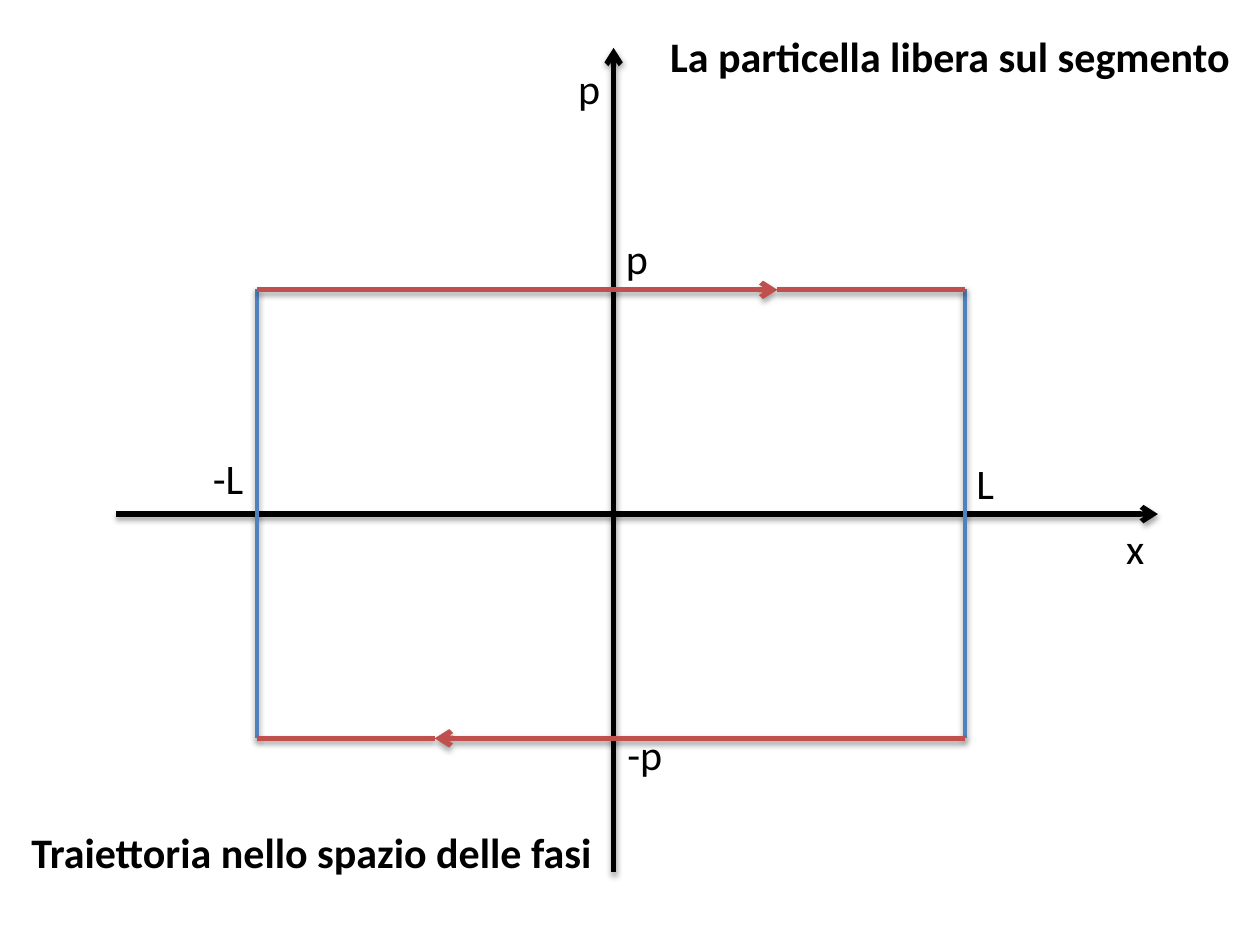
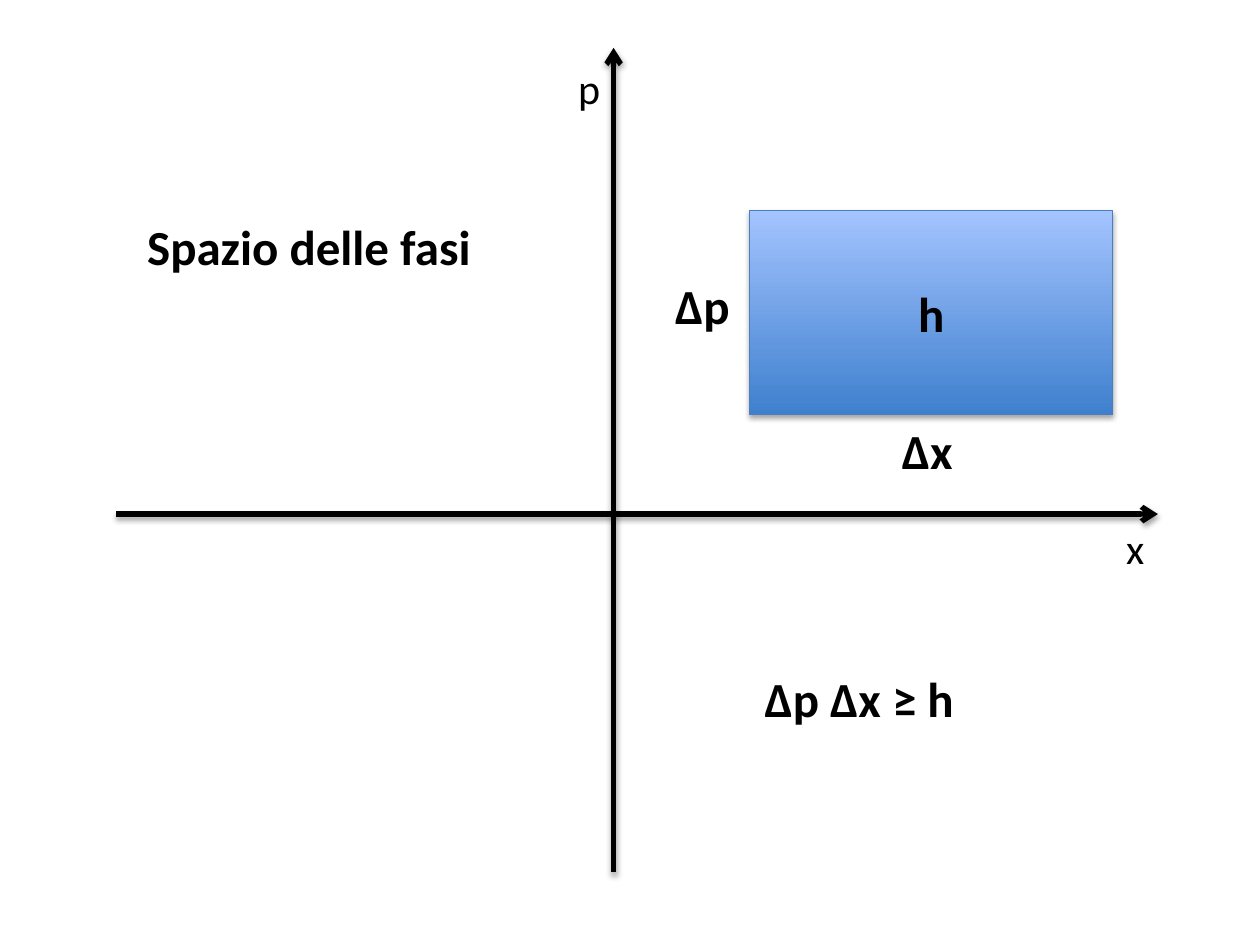
from lxml import etree
from pptx import Presentation, util as u
from pptx.dml.color import RGBColor
from pptx.enum import shapes, text
from pptx.oxml.ns import qn

PX = 9144  # EMU per px, 100 px to the inch
FONT = "Calibri"
COL = {"ink": "000000", "wall": "4F81BD", "path": "C0504D",
       "low": "3F80CE", "high": "A4C4FF", "edge": "4B7EBC"}
AXES = (92, 38, 827, 654)
ORBIT = (204, 230, 562, 356)
CELL = (595, 167, 288, 162)


def rgb(name):
    return RGBColor.from_string(COL[name])


def shade(shape, dist=23000, alpha=35):
    """Soft shadow straight below; call after the line is set."""
    fx = etree.SubElement(shape._element.spPr, qn("a:effectLst"))
    drop = etree.SubElement(fx, qn("a:outerShdw"), blurRad="40000",
                            dist=str(dist), dir="5400000", rotWithShape="0")
    tint = etree.SubElement(drop, qn("a:srgbClr"), val=COL["ink"])
    etree.SubElement(tint, qn("a:alpha"), val=str(alpha * 1000))


def stroke(slide, start, end, col, width=3, arrow=False, **shadow):
    ends = [n * PX for n in (*start, *end)]
    line = slide.shapes.add_connector(shapes.MSO_CONNECTOR.STRAIGHT, *ends)
    line.line.color.rgb = rgb(col)
    line.line.width = u.Pt(width)
    if arrow:
        etree.SubElement(line.line._get_or_add_ln(), qn("a:tailEnd"), type="arrow")
    shade(line, **shadow)


def style(frame, words, size, bold):
    para = frame.paragraphs[0]
    para.text = words
    font = para.font
    font.name, font.size, font.bold = FONT, u.Pt(size), bold
    font.color.rgb = rgb("ink")
    return para


def label(slide, words, left, top, width, size=24, bold=False, wrap=False):
    high = 50 if size == 24 else 57
    box = slide.shapes.add_textbox(left * PX, top * PX, width * PX, high * PX)
    frame = box.text_frame
    frame.word_wrap = wrap
    frame.auto_size = text.MSO_AUTO_SIZE.SHAPE_TO_FIT_TEXT
    style(frame, words, size, bold)


def axes(slide, box):
    """Position and momentum axes with their names."""
    x, y, w, h = box
    mid_x, mid_y = x + 395, y + 370
    stroke(slide, (x, mid_y), (x + w, mid_y), "ink", arrow=True)
    stroke(slide, (mid_x, y + h), (mid_x, y), "ink", arrow=True)
    label(slide, "p", mid_x - 38, y + 7, 48, wrap=True)
    label(slide, "x", x + w - 35, mid_y + 2, 50, wrap=True)


def orbit(slide, box):
    """Closed path between the walls at -L and L."""
    x, y, w, h = box
    right, base = x + w, y + h
    for wall in (right, x):
        stroke(slide, (wall, y - 1), (wall, base), "wall", 2, dist=20000, alpha=38)

    # Limits on both axes
    label(slide, "L", right - 1, y + 128, 34)
    label(slide, "-L", x - 45, y + 124, 72, wrap=True)
    label(slide, "p", x + 283, y - 50, 36, wrap=True)
    label(slide, "-p", x + 284, base - 13, 48)

    # Each run has an arrow part and a plain rest
    for start, tip, end, row in ((x, x + 413, right, y), (right, x + 141, x, base)):
        stroke(slide, (start, row), (tip, row), "path", arrow=True)
        stroke(slide, (tip, row), (end, row), "path")


def cell(slide, box):
    """Smallest cell of phase space, with its two sides named."""
    x, y, w, h = box
    rect = slide.shapes.add_shape(shapes.MSO_SHAPE.RECTANGLE,
                                  *(n * PX for n in box))
    rect.fill.gradient()
    rect.fill.gradient_angle = 90
    for stop, name in zip(rect.fill.gradient_stops, ("low", "high")):
        stop.color.rgb = rgb(name)
        stop.position = float(name == "high")
    rect.line.color.rgb = rgb("edge")
    rect.line.width = u.Pt(0.75)
    shade(rect)
    frame = rect.text_frame
    frame.vertical_anchor = text.MSO_ANCHOR.MIDDLE
    style(frame, "h", 28, True).alignment = text.PP_ALIGN.CENTER
    label(slide, "Δx", x + 111, y + h, 61, 28, True)
    label(slide, "Δp", x - 69, y + 47, 64, 28, True)


def main():
    deck = Presentation()
    deck.slide_width, deck.slide_height = 1000 * PX, 750 * PX
    pages = [deck.slides.add_slide(deck.slide_layouts[6]) for _ in range(2)]
    for page in pages:
        axes(page, AXES)
    free, phase = pages

    # Free particle on a segment
    orbit(free, ORBIT)
    label(free, "La particella libera sul segmento", 522, 19, 470, bold=True)
    label(free, "Traiettoria nello spazio delle fasi", 15, 651, 473, bold=True)

    # Phase space and uncertainty
    label(phase, "Spazio delle fasi", 107, 167, 280, 28, True)
    cell(phase, CELL)
    label(phase, "Δp Δx ≥ h", 597, 526, 172, 28, True)
    deck.save("out.pptx")


if __name__ == "__main__":
    main()
